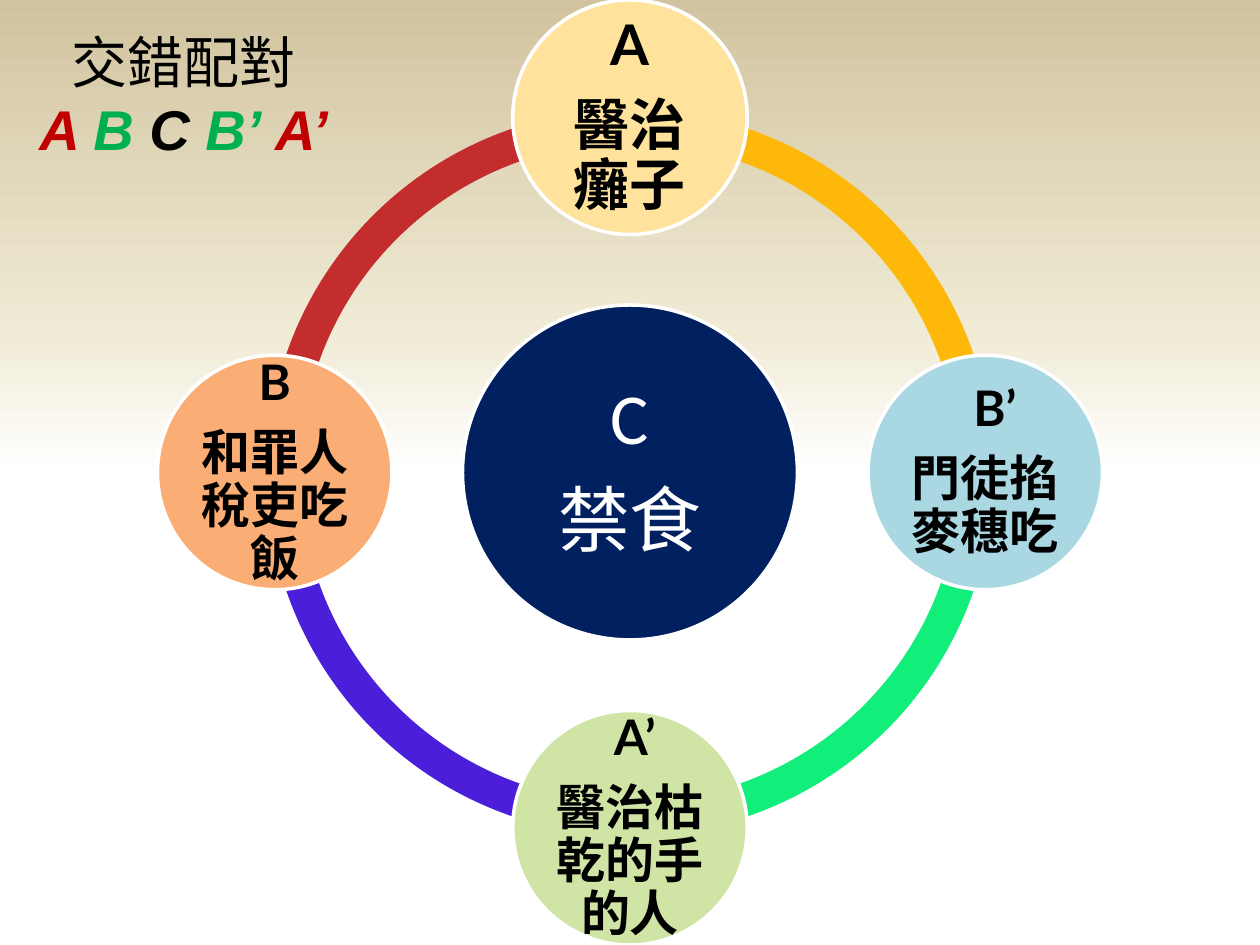
from lxml import etree
from pptx import Presentation
from pptx.dml.color import RGBColor
from pptx.enum.shapes import MSO_SHAPE
from pptx.enum.text import MSO_ANCHOR, PP_ALIGN
from pptx.oxml.ns import qn
from pptx.util import Pt

ARC, OVAL = MSO_SHAPE.BLOCK_ARC, MSO_SHAPE.OVAL
MIDDLE, CENTER = MSO_ANCHOR.MIDDLE, PP_ALIGN.CENTER

# Content
BACKGROUND = [(50, "FFFFFF"), (65, "F0EBD5"), (100, "D1C39F")]
HEADING = "交錯配對"
PATTERN = [("A ", "C00000"), ("B", "00B050"), (" C", "000000"),
           (" B’ ", "00B050"), ("A’", "C00000")]
HUB = ("C", "禁食", "002060")
# label, text, fill, size, label indent, direction from the hub (x, y)
NODES = [
    ("A", "醫治癱子", "FFE39D", 32, 0, (0, -1)),
    ("B’", "門徒掐麥穗吃", "A9D7E2", 28, 11, (1, 0)),
    ("A’", "醫治枯乾的手的人", "D0E4A6", 28, 5.5, (0, 1)),
    ("B", "和罪人稅吏吃飯", "FAAE76", 28, 0, (-1, 0)),
]
# fill, start and end angle in degrees
ARCS = [("C32D2E", 180, 270), ("4B1FD9", 90, 180),
        ("12EE7A", 0, 90), ("FEB80A", 270, 0)]

# Geometry in points
WIDTH, HEIGHT = 720, 540
CX, CY = WIDTH / 2, HEIGHT / 2
RING, HUB_SIZE, NODE_SIZE = 415.4, 191.4, 134
ORBIT = 203
ANGLE_UNIT = 0.6  # adjustment value of one degree


def rgb(value):
    return RGBColor.from_string(value)


def add_round(kind, cx, cy, size, fill, outline=True):
    sp = s.shapes.add_shape(kind, Pt(cx - size / 2), Pt(cy - size / 2),
                            Pt(size), Pt(size))
    sp.shadow.inherit = False
    sp.fill.solid()
    sp.fill.fore_color.rgb = rgb(fill)
    if outline:
        sp.line.color.rgb = rgb("FFFFFF")
        sp.line.width = Pt(2)
    else:
        sp.line.fill.background()
    return sp


def add_run(p, text, size=32, font="Arial", color="000000", bold=False, italic=False):
    r = p.add_run()
    r.text = text
    r.font.size, r.font.name = Pt(size), font
    r.font.color.rgb = rgb(color)
    r.font.bold, r.font.italic = bold, italic


def fill_circle(sp, label, text, inset, indent=0, **style):
    tf = sp.text_frame
    tf.word_wrap, tf.vertical_anchor = True, MIDDLE
    tf.margin_left = tf.margin_right = tf.margin_top = tf.margin_bottom = Pt(inset)
    for p, line in zip((tf.paragraphs[0], tf.add_paragraph()), (label, text)):
        p.alignment, p.line_spacing = CENTER, 0.9
        p.space_after = Pt(0.35 * style["size"])
        add_run(p, line, **style)
    if indent:
        tf.paragraphs[0]._p.get_or_add_pPr().set("marL", str(Pt(indent)))


prs = Presentation()
prs.slide_width, prs.slide_height = Pt(WIDTH), Pt(HEIGHT)
s = prs.slides.add_slide(prs.slide_layouts[6])

# Background gradient, bottom to top
bg = s.background.fill
bg.gradient()
bg.gradient_angle = 90
stops = s._element.find(".//" + qn("a:gsLst"))
for old in list(stops):
    stops.remove(old)
for pos, color in BACKGROUND:
    gs = etree.SubElement(stops, qn("a:gs"), pos=str(pos * 1000))
    etree.SubElement(gs, qn("a:srgbClr"), val=color)

# Ring of four arcs
for color, start, end in ARCS:
    sp = add_round(ARC, CX, CY, RING, color, outline=False)
    for i, value in enumerate((start * ANGLE_UNIT, end * ANGLE_UNIT, 0.046)):
        sp.adjustments[i] = value

# Hub and the four nodes around it
label, text, color = HUB
fill_circle(add_round(OVAL, CX, CY, HUB_SIZE, color), label, text, 4,
            size=41, font="Calibri", color="FFFFFF")
for label, text, color, size, indent, (dx, dy) in NODES:
    sp = add_round(OVAL, CX + dx * ORBIT, CY + dy * ORBIT, NODE_SIZE, color)
    fill_circle(sp, label, text, 2.8, indent, size=size, font="Lato", bold=True)

# Heading with the coloured pattern
tf = s.shapes.add_textbox(Pt(0), Pt(12), Pt(210), Pt(85)).text_frame
tf.word_wrap = True
p = tf.paragraphs[0]
p.alignment = CENTER
add_run(p, HEADING)
p = tf.add_paragraph()
p.alignment = CENTER
for text, color in PATTERN:
    add_run(p, text, color=color, bold=True, italic=True)

prs.save("out.pptx")
